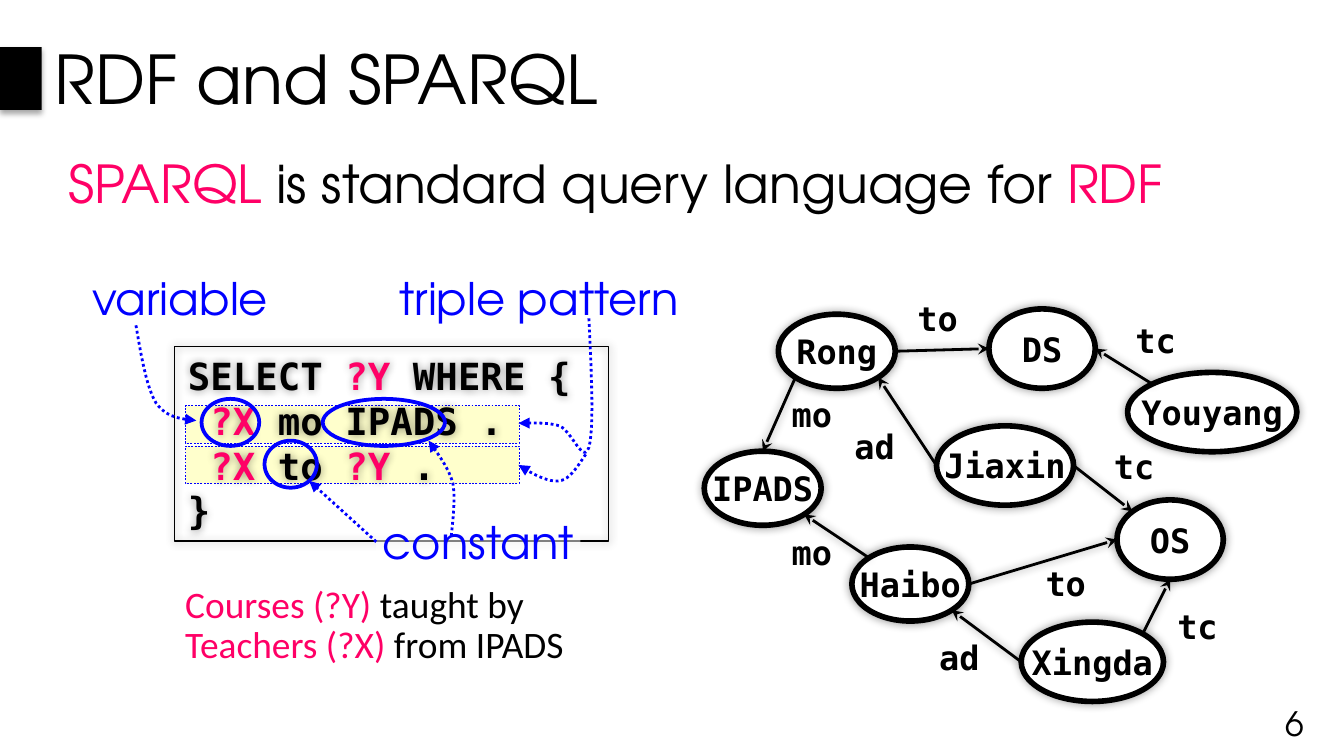
import pptx
import pptx.dml.color
import pptx.enum.dml
import pptx.enum.shapes
import pptx.enum.text
import pptx.oxml.ns
import pptx.util
from lxml import etree
from pptx.util import Cm

COLORS = {"black": "000000", "white": "FFFFFF", "blue": "0000FF",
          "pink": "FF0066", "cream": "FFFFCC"}
SANS, MONO, BODY = "TeX Gyre Adventor", "DejaVu Sans Mono", "Calibri"
SHAPE = pptx.enum.shapes.MSO_SHAPE
ALIGN = pptx.enum.text.PP_ALIGN
ANCHOR = pptx.enum.text.MSO_ANCHOR
DASH = pptx.enum.dml.MSO_LINE
GLOW = (40, 5, 0, 0)

# Fractions of an ellipse's width and height at its connection sites
NEAR, FAR = 0.146, 0.854
SITES = {"top": (0.5, 0), "bottom": (0.5, 1), "left": (0, 0.5), "right": (1, 0.5),
         "top left": (NEAR, NEAR), "top right": (FAR, NEAR),
         "bottom left": (NEAR, FAR), "bottom right": (FAR, FAR)}

NODES = {
    "Xingda": (19.3, 11.76, 2.69, 1.5),
    "OS": (21.11, 9.45, 2.01, 1.5),
    "Rong": (14.71, 5.94, 2.21, 1.4),
    "Jiaxin": (17.7, 8.05, 2.59, 1.5),
    "DS": (18.69, 5.84, 2.01, 1.5),
    "Youyang": (21.31, 7.04, 3.2, 1.5),
    "Haibo": (16.1, 10.34, 2.21, 1.4),
    "IPADS": (13.31, 8.53, 2.21, 1.4),
}
# From node and site, to node and site, label and its left and top
EDGES = [
    ("Haibo", "right", "OS", "left", "to", 19.51, 10.52),
    ("Xingda", "top right", "OS", "bottom", "tc", 22, 11.33),
    ("Xingda", "left", "Haibo", "bottom right", "ad", 17.5, 11.91),
    ("Rong", "right", "DS", "left", "to", 17.09, 5.51),
    ("Jiaxin", "left", "Rong", "bottom right", "ad", 15.9, 7.92),
    ("Youyang", "top left", "DS", "right", "tc", 21.21, 5.92),
    ("Rong", "bottom left", "IPADS", "top", "mo", 14.71, 7.32),
    ("Jiaxin", "right", "OS", "top left", "tc", 20.8, 8.31),
    ("Haibo", "top left", "IPADS", "bottom right", "mo", 14.71, 9.93),
]
# Start point, then two control points and an end point for each Bézier piece
CURVES = [
    [(8.53, 10.13), (8.56, 9.8), (8.61, 9.45), (8.56, 9.14),
     (8.48, 8.84), (8.28, 8.59), (8.1, 8.33)],
    [(2.57, 6.15), (2.67, 6.73), (2.77, 7.32), (2.95, 7.62),
     (3.15, 7.9), (3.43, 7.92), (3.71, 7.95)],
    [(11.13, 6.02), (11.18, 7.06), (11.23, 8.1), (11.13, 8.46), (11.02, 8.79),
     (10.8, 8.13), (10.57, 8.05), (10.34, 7.98), (10.08, 8), (9.8, 8)],
    [(11.07, 8.59), (10.92, 8.81), (10.77, 9.07), (10.57, 9.09),
     (10.36, 9.12), (10.08, 8.97), (9.8, 8.79)],
]


def rgb(name):
    return pptx.dml.color.RGBColor.from_string(COLORS[name])


def add_xml(parent, tag, **attributes):
    element = etree.SubElement(parent, pptx.oxml.ns.qn(tag))
    for key, value in attributes.items():
        element.set(key, str(value))
    return element


def set_shadow(shape, shadow=None):
    """Give the shape only this shadow: opacity %, blur pt, distance pt, degrees."""
    effects = add_xml(shape.element.spPr, "a:effectLst")
    if shadow:
        opacity, blur, distance, angle = shadow
        outer = add_xml(effects, "a:outerShdw", blurRad=int(pptx.util.Pt(blur)),
                        dist=int(pptx.util.Pt(distance)), dir=angle * 60000,
                        algn="ctr", rotWithShape=0)
        add_xml(add_xml(outer, "a:srgbClr", val=COLORS["black"]),
                "a:alpha", val=opacity * 1000)


def set_line(shape, color, width, dash=None, head=None):
    shape.line.color.rgb = rgb(color)
    shape.line.width = pptx.util.Pt(width)
    if dash:
        shape.line.dash_style = dash
    if head:
        add_xml(shape.line._get_or_add_ln(), "a:tailEnd", type=head)


def add_shape(shapes, kind, place, fill=None, line=None, shadow=None):
    shape = shapes.add_shape(kind, *map(Cm, place))
    if fill:
        shape.fill.solid()
        shape.fill.fore_color.rgb = rgb(fill)
    else:
        shape.fill.background()
    if line:
        set_line(shape, *line)
    else:
        shape.line.fill.background()
    set_shadow(shape, shadow)
    return shape


def write(box, lines, font, size, bold=False, align=ALIGN.LEFT,
          anchor=ANCHOR.TOP, inset=True, wrap=True, spacing=None):
    """Fill the box; each line is a list of (text, color) spans."""
    frame = box.text_frame
    frame.word_wrap = wrap
    frame.vertical_anchor = anchor
    if not inset:
        frame.margin_left = frame.margin_right = Cm(0)
        frame.margin_top = frame.margin_bottom = Cm(0)
    for index, spans in enumerate(lines):
        para = frame.add_paragraph() if index else frame.paragraphs[0]
        para.alignment = align
        para.line_spacing = spacing
        para.font.name = font
        para.font.size = pptx.util.Pt(size)
        para.font.bold = bold
        for text, color in spans:
            span = para.add_run()
            span.text = text
            span.font.color.rgb = rgb(color)


def add_text(shapes, place, lines, font, size, **options):
    write(shapes.add_textbox(*map(Cm, place)), lines, font, size, **options)


def add_callout(shapes, text, place):
    """Blue caption on half-transparent white."""
    box = add_shape(shapes, SHAPE.RECTANGLE, place, "white")
    color = box.element.spPr.find(".//" + pptx.oxml.ns.qn("a:srgbClr"))
    add_xml(color, "a:alpha", val=50000)
    write(box, [[(text, "blue")]], SANS, 24, align=ALIGN.CENTER, inset=False)
    return box


def add_curve(shapes, points, steps=12):
    """Dotted arrow along joined cubic Bézier pieces."""
    track = []
    for first in range(0, len(points) - 1, 3):
        piece = points[first:first + 4]
        for step in range(1, steps + 1):
            t = step / steps
            weights = ((1 - t) ** 3, 3 * t * (1 - t) ** 2, 3 * t * t * (1 - t), t ** 3)
            track.append([Cm(sum(w * p[axis] for w, p in zip(weights, piece)))
                          for axis in (0, 1)])
    builder = shapes.build_freeform(*map(Cm, points[0]))
    builder.add_line_segments(track, close=False)
    curve = builder.convert_to_shape()
    curve.fill.background()
    set_line(curve, "blue", 1.5, DASH.ROUND_DOT, "triangle")
    set_shadow(curve)


def site(shape, name):
    across, down = SITES[name]
    return (int(shape.left + across * shape.width),
            int(shape.top + down * shape.height))


def add_arrow(shapes, start, end, line, shadow=None):
    arrow = shapes.add_connector(pptx.enum.shapes.MSO_CONNECTOR.STRAIGHT, *start, *end)
    set_line(arrow, *line)
    set_shadow(arrow, shadow)
    return arrow


def add_query(shapes):
    """SPARQL query with its annotations."""
    for top in (7.67, 8.43):
        add_shape(shapes, SHAPE.RECTANGLE, (3.51, top, 6.3, 0.71), "cream",
                  ("blue", 0.25, DASH.DASH))
    code = add_shape(shapes, SHAPE.RECTANGLE, (3.3, 6.55, 8.2, 3.68),
                     line=("black", 0.75), shadow=GLOW)
    write(code, [
        [("SELECT ", "black"), ("?Y ", "pink"), ("WHERE {", "black")],
        [(" ?X ", "pink"), ("mo IPADS .", "black")],
        [(" ?X ", "pink"), ("to ", "black"), ("?Y", "pink"), (" .", "black")],
        [("}", "black")],
    ], MONO, 20, bold=True)
    constant = add_callout(shapes, "constant", (7.11, 9.73, 3.86, 1.02))
    add_callout(shapes, "variable", (1.5, 5.11, 3.81, 1.02))
    add_callout(shapes, "triple pattern", (7.29, 5.11, 5.79, 1.02))
    for points in CURVES:
        add_curve(shapes, points)
    rings = [add_shape(shapes, SHAPE.OVAL, (left, top, width, 0.89), line=("blue", 2))
             for left, top, width in ((3.81, 7.54, 1.09), (6.1, 7.54, 2.31), (5, 8.33, 0.99))]
    arrow = add_arrow(shapes, site(constant, "left"), site(rings[-1], "bottom right"),
                      ("blue", 1.5, DASH.ROUND_DOT, "triangle"))
    arrow.begin_connect(constant, 1)


def add_graph(shapes):
    nodes = {}
    for name, place in NODES.items():
        nodes[name] = add_shape(shapes, SHAPE.OVAL, place, "white", ("black", 3), GLOW)
        write(nodes[name], [[(name, "black")]], MONO, 18, bold=True, align=ALIGN.CENTER,
              anchor=ANCHOR.MIDDLE, inset=False, wrap=False)
    for source, leave, target, enter, label, left, top in EDGES:
        add_arrow(shapes, site(nodes[source], leave), site(nodes[target], enter),
                  ("black", 1.5, None, "stealth"), GLOW)
        add_text(shapes, (left, top, 1.6, 1.02), [[(label, "black")]], MONO, 18, bold=True)


def main():
    deck = pptx.Presentation()
    deck.slide_width, deck.slide_height = Cm(25.4), Cm(14.29)
    page = deck.slides.add_slide(deck.slide_layouts[6])
    shapes = page.shapes
    add_text(shapes, (0.79, 0, 24.61, 2.95), [[("RDF and SPARQL", "black")]],
             SANS, 36, anchor=ANCHOR.MIDDLE)
    add_shape(shapes, SHAPE.RECTANGLE, (0, 0.89, 0.79, 1.19), "black",
              shadow=(35, 3.1, 1.8, 90))
    add_text(shapes, (1.04, 2.74, 22.07, 1.6),
             [[("SPARQL ", "pink"), ("is standard query language for ", "black"),
               ("RDF", "pink")]], SANS, 28)
    add_query(shapes)
    add_graph(shapes.add_group_shape().shapes)
    add_text(shapes, (3.25, 10.95, 8.64, 1.8),
             [[("Courses (?Y)", "pink"), (" taught by ", "black"),
               ("Teachers (?X)", "pink"), (" from IPADS", "black")]], BODY, 20, spacing=0.9)
    add_text(shapes, (23.09, 13.28, 1.8, 0.76), [[("6", "black")]], SANS, 18,
             align=ALIGN.RIGHT, anchor=ANCHOR.MIDDLE)
    deck.save("out.pptx")


if __name__ == "__main__":
    main()
